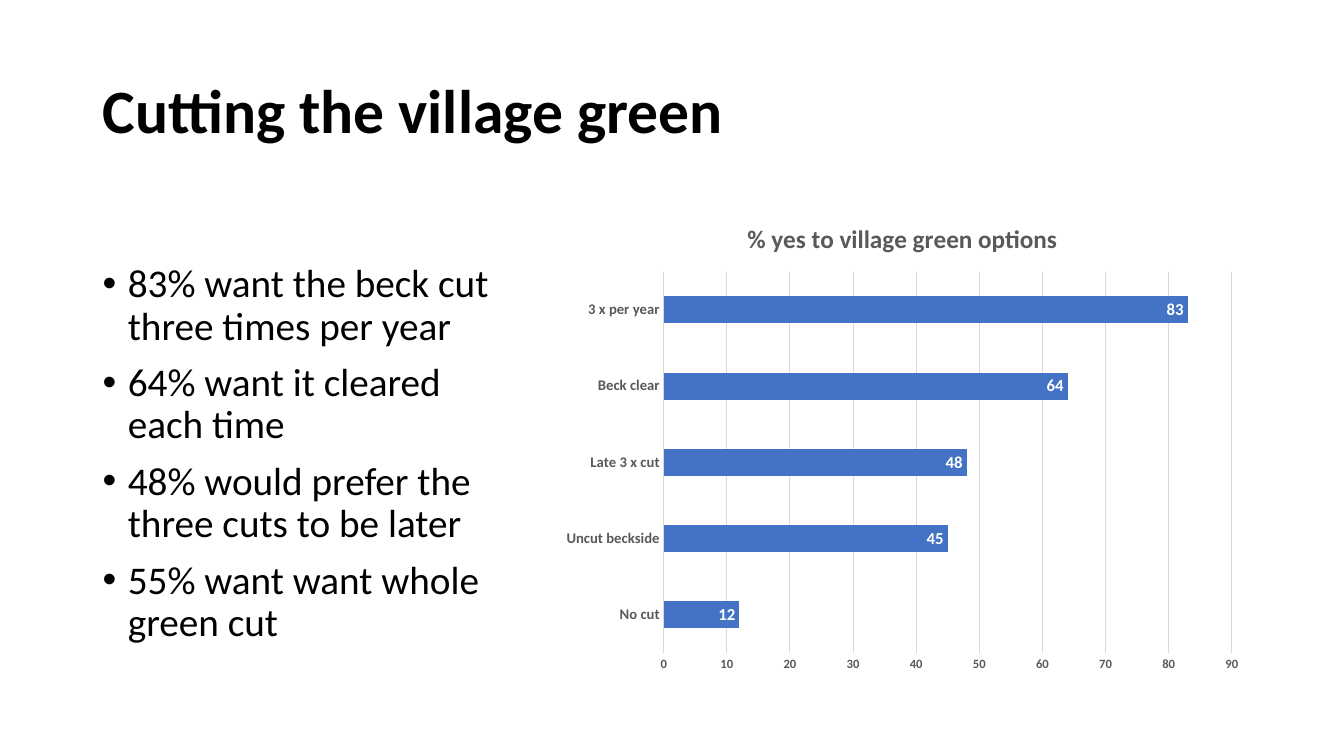
import pptx
import pptx.chart.data
import pptx.dml.color
import pptx.enum.chart
import pptx.enum.text
import pptx.util
from lxml import etree
from pptx.util import Inches, Pt

RGBColor = pptx.dml.color.RGBColor
BLACK = RGBColor(0x00, 0x00, 0x00)
WHITE = RGBColor(0xFF, 0xFF, 0xFF)
GREY = RGBColor(0x59, 0x59, 0x59)
PALE = RGBColor(0xD9, 0xD9, 0xD9)
BLUE = RGBColor(0x44, 0x72, 0xC4)
FACE = "Calibri"

POINTS = [
    "83% want the beck cut three times per year",
    "64% want it cleared each time",
    "48% would prefer the three cuts to be later",
    "55% want want whole green cut",
]
# Bars run from the bottom up
VOTES = {
    "No cut": 12,
    "Uncut beckside": 45,
    "Late 3 x cut": 48,
    "Beck clear": 64,
    "3 x per year": 83,
}


def set_font(font, size, color, bold=False):
    font.name = FACE
    font.size = Pt(size)
    font.bold = bold
    font.color.rgb = color


def add_text(slide, box, lines, size, bold=False):
    shape = slide.shapes.add_textbox(*map(Inches, box))
    frame = shape.text_frame
    frame.word_wrap = True
    frame.text = "\n".join(lines)
    for para in frame.paragraphs:
        para.line_spacing = 0.9
        set_font(para.runs[0].font, size, BLACK, bold)
    return frame


def add_bullet(para):
    props = para._p.get_or_add_pPr()
    props.set("marL", str(Inches(0.25)))
    props.set("indent", str(Inches(-0.25)))
    for tag, key, value in (("buFont", "typeface", "Arial"), ("buChar", "char", "•")):
        item = etree.SubElement(props, pptx.oxml.ns.qn("a:" + tag))
        item.set(key, value)


def style_axis(axis, size):
    axis.major_tick_mark = pptx.enum.chart.XL_TICK_MARK.NONE
    axis.minor_tick_mark = pptx.enum.chart.XL_TICK_MARK.NONE
    set_font(axis.tick_labels.font, size, GREY, True)


def style_line(line):
    line.color.rgb = PALE
    line.width = Pt(0.75)


def add_bars(slide, box):
    data = pptx.chart.data.CategoryChartData()
    data.categories = list(VOTES)
    data.add_series("Series 1", list(VOTES.values()))
    kind = pptx.enum.chart.XL_CHART_TYPE.BAR_CLUSTERED
    chart = slide.shapes.add_chart(kind, *map(Inches, box), data).chart
    set_font(chart.font, 10, BLACK)
    chart.has_legend = False

    # Heading
    chart.has_title = True
    head = chart.chart_title.text_frame
    head.text = "% yes to village green options"
    set_font(head.paragraphs[0].runs[0].font, 18, GREY, True)
    chart.chart_title.include_in_layout = False

    # Axes
    style_axis(chart.category_axis, 10.5)
    style_line(chart.category_axis.format.line)
    scale = chart.value_axis
    style_axis(scale, 9)
    scale.minimum_scale, scale.maximum_scale, scale.major_unit = 0, 90, 10
    scale.format.line.fill.background()
    style_line(scale.major_gridlines.format.line)

    # Bars and labels
    plot = chart.plots[0]
    plot.gap_width = 182
    plot.vary_by_categories = False
    bars = plot.series[0]
    bars.format.fill.solid()
    bars.format.fill.fore_color.rgb = BLUE
    labels = bars.data_labels
    labels.show_value = True
    labels.position = pptx.enum.chart.XL_LABEL_POSITION.INSIDE_END
    set_font(labels.font, 12, WHITE, True)


def main():
    deck = pptx.Presentation()
    deck.slide_width = Inches(13.33)
    deck.slide_height = Inches(7.5)
    slide = deck.slides.add_slide(deck.slide_layouts[6])

    # Title
    title = add_text(slide, (0.92, 0.4, 11.5, 1.45), ["Cutting the village green"], 44, True)
    title.vertical_anchor = pptx.enum.text.MSO_ANCHOR.MIDDLE

    # Findings, set below the chart heading
    body = add_text(slide, (0.92, 2, 4.36, 4.76), POINTS, 28)
    body.margin_top = Inches(0.62)
    for para in body.paragraphs:
        add_bullet(para)
    for para in body.paragraphs[1:]:
        para.space_before = Pt(10)

    # Chart
    add_bars(slide, (5.48, 2, 6.94, 4.76))
    deck.save("out.pptx")


if __name__ == "__main__":
    main()
